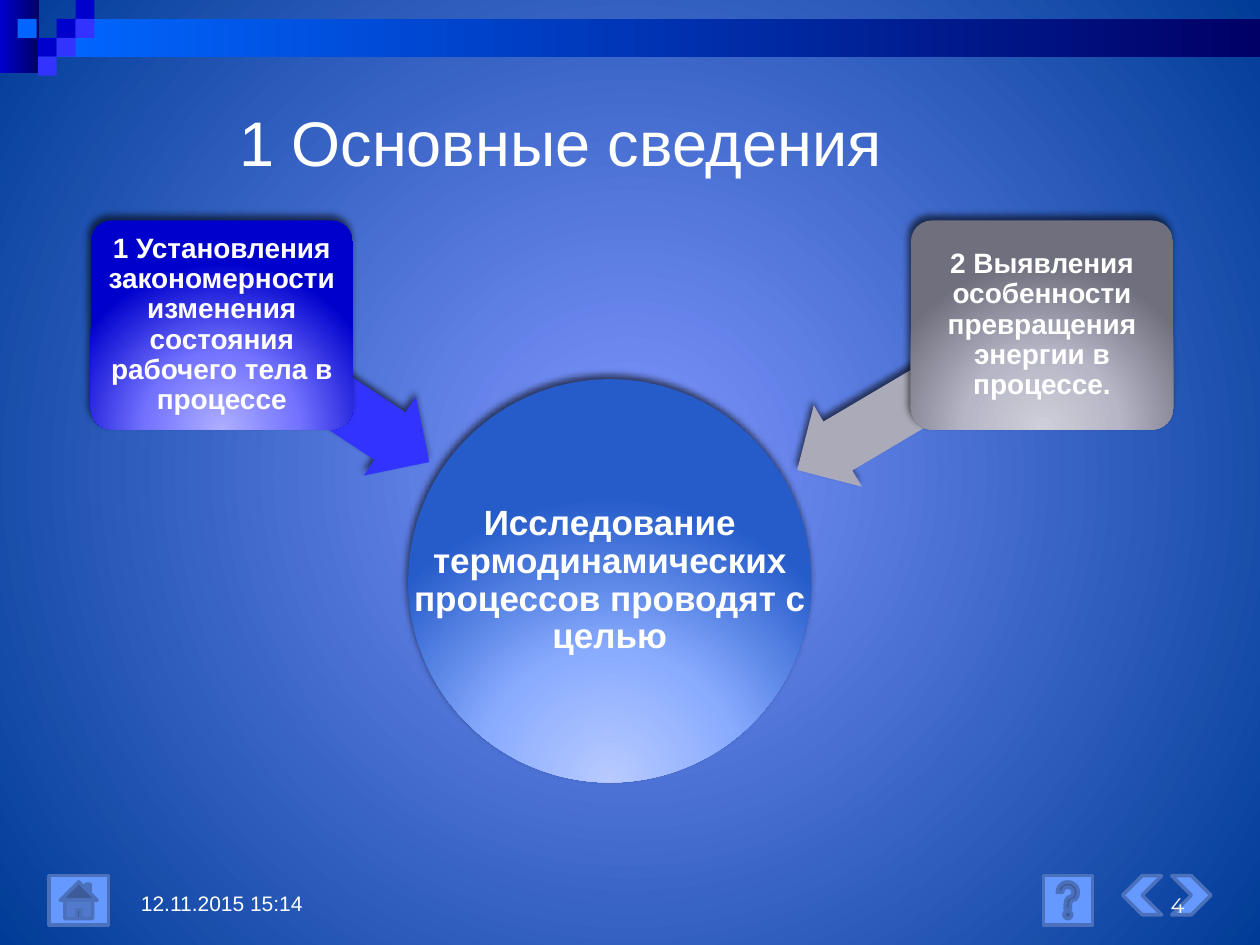
from lxml.etree import SubElement
from pptx import Presentation
from pptx.dml.color import RGBColor
from pptx.enum.shapes import MSO_SHAPE
from pptx.enum.text import MSO_ANCHOR, PP_ALIGN
from pptx.oxml.ns import qn
from pptx.util import Inches, Pt

COLORS = {
    "white": "FFFFFF", "black": "000000", "blue": "0000CC", "navy": "000066",
    "azure": "0066FF", "violet": "3333FF", "silver": "AAAAB8",
    "button": "6699FF", "button_line": "4B71BD",
}
GLOW = (50, 155, 50, -55)

deck = Presentation()
deck.slide_width, deck.slide_height = Inches(10), Inches(7.5)
page = deck.slides.add_slide(deck.slide_layouts[6])


def add_figure(kind, place, fill, focus=None, shadow=False):
    figure = page.shapes.add_shape(kind, *map(Inches, place))
    figure.shadow.inherit = False
    figure.line.fill.background()
    if isinstance(fill, str):
        figure.fill.solid()
        figure.fill.fore_color.rgb = RGBColor.from_string(fill)
    else:
        set_gradient(figure.fill, figure.element, fill, focus)
    if shadow:
        effects = figure.element.spPr.find(qn("a:effectLst"))
        outer = SubElement(effects, qn("a:outerShdw"), blurRad=str(Pt(4)), dist=str(Pt(3)),
                           dir=str(245 * 60000), rotWithShape="0")
        color = SubElement(outer, qn("a:srgbClr"), val=COLORS["black"])
        SubElement(color, qn("a:alpha"), val="60000")
    return figure


def set_gradient(fill, owner, stops, focus=None):
    fill.gradient()
    gradient = next(owner.iter(qn("a:gradFill")))
    for child in list(gradient):
        gradient.remove(child)
    stop_list = SubElement(gradient, qn("a:gsLst"))
    for position, color in stops:
        stop = SubElement(stop_list, qn("a:gs"), pos=str(position * 1000))
        SubElement(stop, qn("a:srgbClr"), val=color)
    if focus:
        shade = SubElement(gradient, qn("a:path"), {"path": "circle"})
        edges = {side: str(value * 1000) for side, value in zip("ltrb", focus)}
        SubElement(shade, qn("a:fillToRect"), edges)
    else:
        SubElement(gradient, qn("a:lin"), ang="0", scaled="1")


background = page.background.fill
set_gradient(background, page.element, [(0, "7F96FF"), (100, "003C97")], (50, 50, 50, 50))

for place, start in [((0, 0, 0.31, 0.58), "blue"), ((0.45, 0.15, 9.55, 0.3), "azure")]:
    add_figure(MSO_SHAPE.RECTANGLE, place, [(0, COLORS[start]), (100, COLORS["navy"])])

for left, top, color in [
    (0.45, 0.15, "blue"), (0.6, 0, "blue"), (0.6, 0.15, "violet"), (0.3, 0.3, "blue"),
    (0.14, 0.15, "azure"), (0.45, 0.3, "violet"), (0.3, 0.45, "violet"),
]:
    add_figure(MSO_SHAPE.RECTANGLE, (left, top, 0.15, 0.15), COLORS[color])

circle_place = (3.24, 3.01, 3.2, 3.2)
purpose_places = [(0.72, 1.75, 2.08, 1.66), (7.23, 1.75, 2.08, 1.66)]

add_figure(MSO_SHAPE.OVAL, circle_place,
           [(0, "B8CAFF"), (46, "8AACFF"), (100, "265CCA")], GLOW, shadow=True)

for place, arrow_place, angle, arrow_color, stops in [
    (purpose_places[0], (1.6, 2.75, 1.97, 0.75), 213.4, "violet",
     [(0, "AEAEFF"), (46, "7373FF"), (100, "0000CD")]),
    (purpose_places[1], (6.17, 2.78, 2.26, 0.75), 329.4, "silver",
     [(0, "CFCFDA"), (46, "B6B6C7"), (100, "6F6F7E")]),
]:
    arrow = add_figure(MSO_SHAPE.LEFT_ARROW, arrow_place, COLORS[arrow_color], shadow=True)
    arrow.rotation = angle
    arrow.adjustments[0] = 0.6
    card = add_figure(MSO_SHAPE.ROUNDED_RECTANGLE, place, stops, GLOW, shadow=True)
    card.adjustments[0] = 0.1

for kind, place, flipped in [
    (MSO_SHAPE.CHEVRON, (9.3, 6.95, 0.31, 0.31), False),
    (MSO_SHAPE.CHEVRON, (8.91, 6.95, 0.31, 0.31), True),
    (MSO_SHAPE.ACTION_BUTTON_HOME, (0.39, 6.95, 0.47, 0.39), False),
    (MSO_SHAPE.ACTION_BUTTON_HELP, (8.28, 6.95, 0.39, 0.39), False),
]:
    button = add_figure(kind, place, COLORS["button"])
    button.line.color.rgb = RGBColor.from_string(COLORS["button_line"])
    button.line.width = Pt(2)
    if flipped:
        button.element.spPr.find(qn("a:xfrm")).set("flipH", "1")

LEFT, CENTER, RIGHT = PP_ALIGN.LEFT, PP_ALIGN.CENTER, PP_ALIGN.RIGHT
MIDDLE, BOTTOM = MSO_ANCHOR.MIDDLE, MSO_ANCHOR.BOTTOM
for place, text, size, font, align, anchor, inset in [
    ((1.8, 0.47, 8.88, 1.3), "1 Основные сведения", 36, "Arial", LEFT, MIDDLE, None),
    (circle_place, "Исследование термодинамических процессов проводят с целью",
     20, "Arial", CENTER, MIDDLE, 0.01),
    (purpose_places[0],
     "1 Установления закономерности изменения состояния рабочего тела в процессе",
     16, "Arial", CENTER, MIDDLE, 0.03),
    (purpose_places[1], "2 Выявления особенности превращения энергии в процессе.",
     16, "Arial", CENTER, MIDDLE, 0.03),
    ((1.02, 6.8, 2.33, 0.52), "12.11.2015 15:14", 12, "Arial", LEFT, BOTTOM, None),
    ((7.17, 6.83, 2.33, 0.5), "4", 12, "Montserrat", RIGHT, BOTTOM, None),
]:
    box = page.shapes.add_textbox(*map(Inches, place))
    frame = box.text_frame
    frame.word_wrap = True
    frame.vertical_anchor = anchor
    para = frame.paragraphs[0]
    para.alignment = align
    span = para.add_run()
    span.text = text
    span.font.size = Pt(size)
    span.font.name = font
    span.font.color.rgb = RGBColor.from_string(COLORS["white"])
    if inset:
        frame.margin_left = frame.margin_right = Inches(inset)
        frame.margin_top = frame.margin_bottom = Inches(inset)
        para.line_spacing = 0.9
        span.font.bold = True

deck.save("out.pptx")
